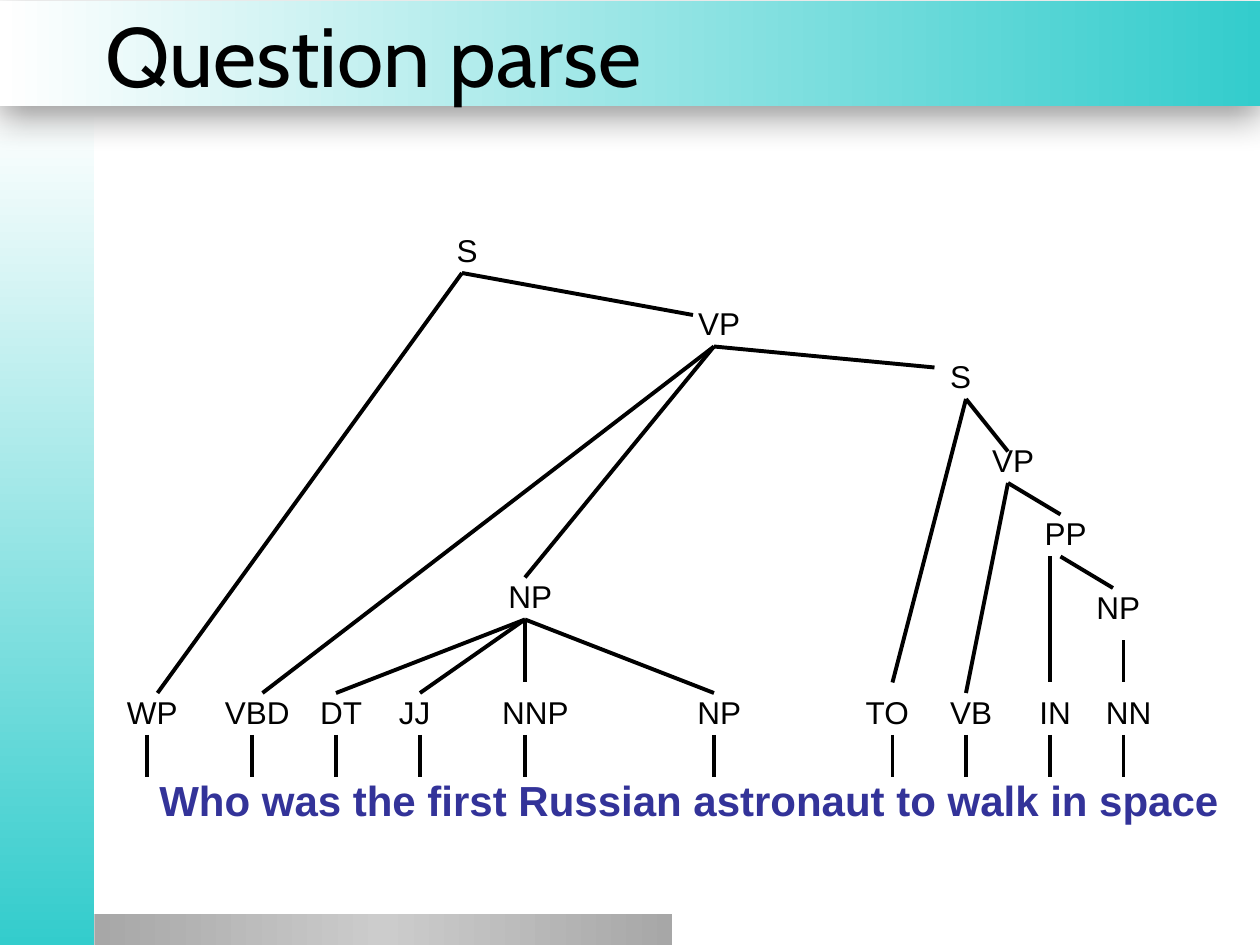
from lxml import etree
from pptx import Presentation
from pptx.dml.color import RGBColor
from pptx.enum.shapes import MSO_CONNECTOR, MSO_SHAPE
from pptx.enum.text import MSO_ANCHOR, PP_ALIGN
from pptx.oxml import parse_xml
from pptx.oxml.ns import nsdecls, qn
from pptx.util import Pt

STRAIGHT = MSO_CONNECTOR.STRAIGHT
RECTANGLE = MSO_SHAPE.RECTANGLE
MIDDLE, TOP = MSO_ANCHOR.MIDDLE, MSO_ANCHOR.TOP
LEFT, CENTER = PP_ALIGN.LEFT, PP_ALIGN.CENTER

WHITE = RGBColor(0xFF, 0xFF, 0xFF)
BLACK = RGBColor(0, 0, 0)
TURQUOISE = RGBColor(0x33, 0xCC, 0xCC)
INDIGO = RGBColor(0x33, 0x33, 0x99)
GRAY = RGBColor(0xA7, 0xA7, 0xA7)
SILVER = RGBColor(0xCC, 0xCC, 0xCC)

GRID = 6
LABEL_WIDTH = 5
LABEL_HEIGHT = 21.6
LEAF_ROW = 44
STEM_TOP, STEM_BOTTOM = 48, 52

LEAVES = [
    ("WP", 0, 5, 2), ("VBD", 9, 7, 12), ("DT", 18, 5, 20), ("JJ", 25, 5, 28),
    ("NNP", 35, 8, 38), ("NP", 54, 5, 56), ("TO", 70, 5, 73),
    ("VB", 78, 5, 80), ("IN", 86, 5, 88), ("NN", 93, 5, 95),
]
PHRASES = [
    ("S", 30, 0), ("VP", 54, 7), ("S", 77, 12), ("VP", 82, 20),
    ("PP", 87, 27), ("NP", 92, 34), ("NP", 36, 33),
]
BRANCHES = [
    ((32, 4), [(3, 44), (54, 8)]),
    ((56, 11), [(13, 44), (38, 33), (77, 13)]),
    ((80, 16), [(73, 43), (84, 21)]),
    ((84, 24), [(80, 44), (89, 27)]),
    ((88, 31), [(88, 43)]),
    ((89, 31), [(94, 34)]),
    ((95, 39), [(95, 43)]),
    ((38, 37), [(20, 44), (28, 44), (38, 43), (56, 44)]),
]


def add_band(slide, box, colors, angle):
    band = slide.shapes.add_shape(RECTANGLE, *map(Pt, box))
    band.shadow.inherit = False
    band.line.fill.background()
    step = 100000 // (len(colors) - 1)
    stops = "".join(
        f'<a:gs pos="{i * step}"><a:srgbClr val="{color}"/></a:gs>'
        for i, color in enumerate(colors)
    )
    gradient = parse_xml(
        f'<a:gradFill {nsdecls("a")} rotWithShape="1"><a:gsLst>{stops}</a:gsLst>'
        f'<a:lin ang="{angle * 60000}" scaled="0"/></a:gradFill>'
    )
    band.element.spPr.find(qn("a:prstGeom")).addnext(gradient)
    return band


def add_shadow(band):
    effects = band.element.spPr.find(qn("a:effectLst"))
    effects.append(parse_xml(
        f'<a:outerShdw {nsdecls("a")} blurRad="{Pt(20)}" dist="{Pt(6)}" '
        f'dir="5400000" algn="t" rotWithShape="0"><a:srgbClr val="{BLACK}">'
        '<a:alpha val="40000"/></a:srgbClr></a:outerShdw>'
    ))


def add_words(slide, box, words, font, size, color,
              bold=False, align=CENTER, anchor=TOP, insets=(0, 0)):
    frame = slide.shapes.add_textbox(*map(Pt, box)).text_frame
    frame.word_wrap = True
    frame.vertical_anchor = anchor
    frame.margin_left = frame.margin_right = Pt(insets[0])
    frame.margin_top = frame.margin_bottom = Pt(insets[1])
    frame.text = words
    paragraph = frame.paragraphs[0]
    paragraph.alignment = align
    style = paragraph.runs[0].font
    style.name, style.size, style.bold = font, Pt(size), bold
    style.color.rgb = color


def add_branch(slide, start, end):
    branch = slide.shapes.add_connector(STRAIGHT, *map(Pt, (*start, *end)))
    branch.line.color.rgb = BLACK
    branch.line.width = Pt(2.25)
    etree.SubElement(branch.element.spPr, qn("a:effectLst"))


def add_frame(slide, width, height):
    add_band(slide, (0, 62, 54, height - 62), [WHITE, TURQUOISE], 90)
    add_shadow(add_band(slide, (0, 0.7, width, 60), [WHITE, TURQUOISE], 0))
    add_band(slide, (54, height - 18, 330, 18), [GRAY, SILVER, GRAY], 0)


def add_parse_tree(slide, left, top):
    def place(column, row):
        return left + column * GRID, top + row * GRID

    labels = [(tag, column, LEAF_ROW, width) for tag, column, width, _ in LEAVES]
    labels += [(tag, column, row, LABEL_WIDTH) for tag, column, row in PHRASES]
    for tag, column, row, width in labels:
        box = (*place(column, row), width * GRID, LABEL_HEIGHT)
        add_words(slide, box, tag, "Arial", 18, BLACK)

    stems = [((stem, STEM_TOP), [(stem, STEM_BOTTOM)]) for *_, stem in LEAVES]
    for apex, children in stems + BRANCHES:
        for child in children:
            add_branch(slide, place(*apex), place(*child))


def main():
    presentation = Presentation()
    presentation.slide_width, presentation.slide_height = Pt(720), Pt(540)
    slide = presentation.slides.add_slide(presentation.slide_layouts[6])
    slide.background.fill.solid()
    slide.background.fill.fore_color.rgb = WHITE

    add_frame(slide, 720, 540)
    add_words(slide, (53.3, 0.7, 612, 60), "Question parse", "Cabin", 48, BLACK,
              align=LEFT, anchor=MIDDLE, insets=(7.2, 3.6))
    add_words(slide, (69.8, 439.2, 648, 36.7),
              "Who was the first Russian astronaut to walk in space",
              "Arial", 24, INDIGO, bold=True, insets=(7.2, 3.6))
    add_parse_tree(slide, 72, 132)
    presentation.save("out.pptx")


if __name__ == "__main__":
    main()
